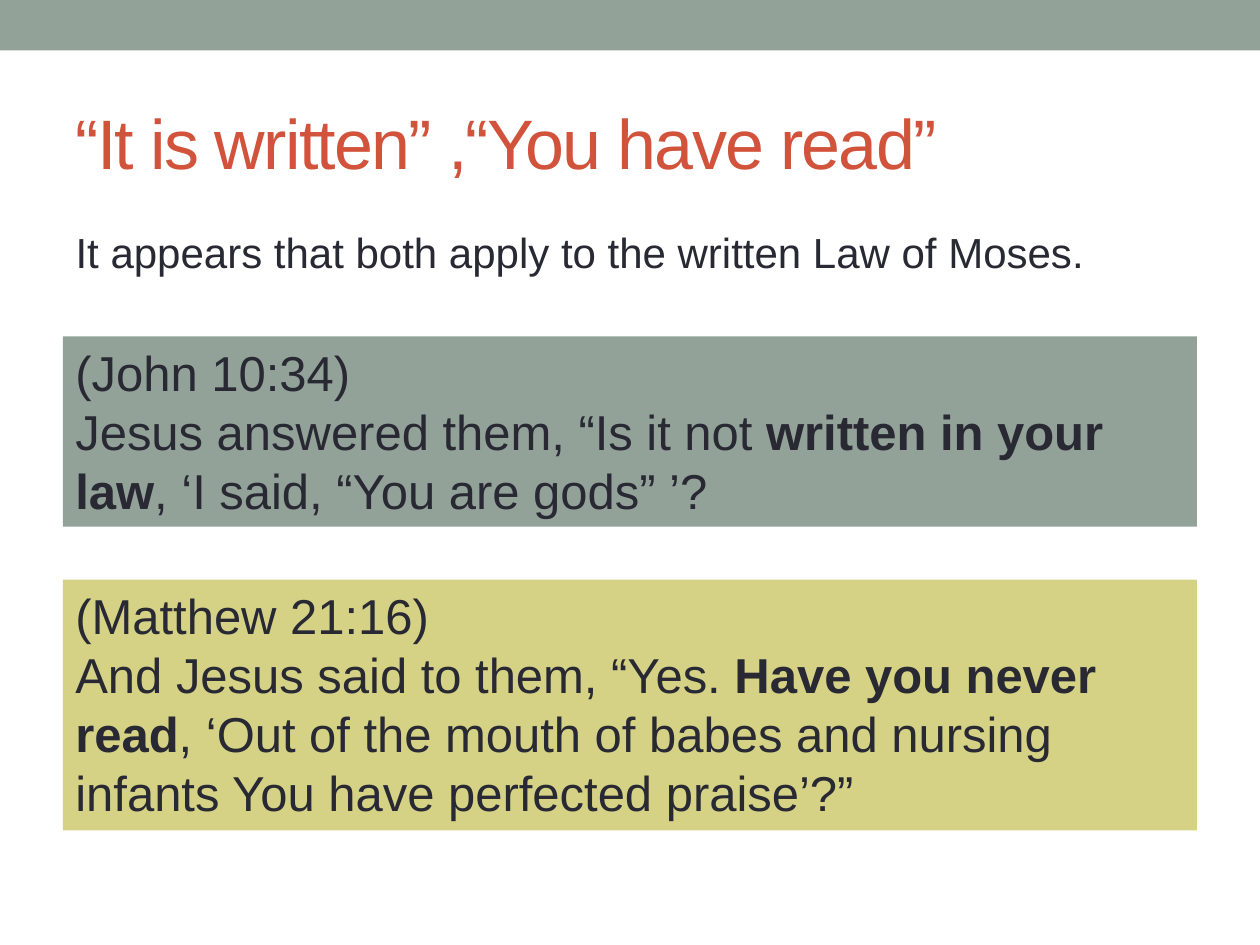
from dataclasses import dataclass

from lxml.etree import SubElement
from pptx import Presentation
from pptx.dml.color import RGBColor as Color
from pptx.enum.shapes import MSO_SHAPE as Shape
from pptx.enum.text import MSO_ANCHOR as Anchor, MSO_AUTO_SIZE as AutoSize, PP_ALIGN as Align
from pptx.oxml.ns import qn
from pptx.util import Inches, Pt


@dataclass(frozen=True)
class Theme:
    """Colours, type sizes and margins shared by the slide."""
    font: str = "Arial"
    ink: str = "292934"
    accent: str = "D2533C"
    sage: str = "93A299"
    olive: str = "D5D286"
    title_size: int = 40
    body_size: int = 24
    quote_size: int = 28
    width: float = 10
    height: float = 7.5
    margin: float = 0.5


THEME = Theme()
CONTENT_WIDTH = THEME.width - 2 * THEME.margin


def place(box, top, height):
    """Put a box in the content column."""
    box.left, box.width = Inches(THEME.margin), Inches(CONTENT_WIDTH)
    box.top, box.height = Inches(top), Inches(height)


def paint(shape, color):
    """Give a shape a plain fill without an outline."""
    shape.fill.solid()
    shape.fill.fore_color.rgb = Color.from_string(color)
    shape.line.fill.background()


def write(para, spans, size, color=THEME.ink):
    """Write (text, bold) spans into a left-aligned paragraph."""
    para.alignment = Align.LEFT
    para.font.name, para.font.size = THEME.font, Pt(size)
    para.font.color.rgb = Color.from_string(color)
    for text, bold in spans:
        span = para.add_run()
        span.text = text
        if bold:
            span.font.bold = True


def add_band(page, height):
    """Draw the band across the top of the page."""
    band = page.shapes.add_shape(Shape.RECTANGLE, 0, 0, Inches(THEME.width), Inches(height))
    band.shadow.inherit = False
    paint(band, THEME.sage)


def fill_title(page, text, top, height):
    """Fill the title placeholder with tightly spaced text."""
    title = page.shapes.title
    place(title, top, height)
    title.text_frame.vertical_anchor = Anchor.MIDDLE
    para = title.text_frame.paragraphs[0]
    write(para, [(text, False)], THEME.title_size, THEME.accent)
    para.runs[0].font._element.set("spc", "-100")


def fill_body(page, text, top, height):
    """Fill the body placeholder with one unbulleted paragraph."""
    body = page.placeholders[1]
    place(body, top, height)
    body.text_frame.auto_size = AutoSize.NONE
    para = body.text_frame.paragraphs[0]
    props = para._p.get_or_add_pPr()
    props.set("marL", "0")
    props.set("indent", "0")
    SubElement(props, qn("a:buNone"))
    write(para, [(text, False)], THEME.body_size)


def add_quote(page, top, height, color, reference, verse):
    """Add a filled box holding a reference and its verse."""
    box = page.shapes.add_textbox(0, 0, 0, 0)
    place(box, top, height)
    paint(box, color)
    frame = box.text_frame
    frame.word_wrap = True
    frame.auto_size = AutoSize.SHAPE_TO_FIT_TEXT
    write(frame.paragraphs[0], [(reference, False)], THEME.quote_size)
    write(frame.add_paragraph(), verse, THEME.quote_size)


def main():
    """Build and save the slide."""
    deck = Presentation()
    deck.slide_width, deck.slide_height = Inches(THEME.width), Inches(THEME.height)
    page = deck.slides.add_slide(deck.slide_layouts[1])
    add_band(page, 0.4)
    fill_title(page, "“It is written” ,“You have read”", 0.58, 1.08)
    fill_body(page, "It appears that both apply to the written Law of Moses.", 1.75, 0.75)
    add_quote(page, 2.67, 1.51, THEME.sage, "(John 10:34)", [
        ("Jesus answered them, “Is it not ", False),
        ("written in your law", True),
        (", ‘I said, “You are gods” ’?", False),
    ])
    add_quote(page, 4.6, 1.99, THEME.olive, "(Matthew 21:16)", [
        ("And Jesus said to them, “Yes. ", False),
        ("Have you never read", True),
        (", ‘Out of the mouth of babes and nursing infants You have perfected praise’?”", False),
    ])
    deck.save("out.pptx")


if __name__ == "__main__":
    main()
